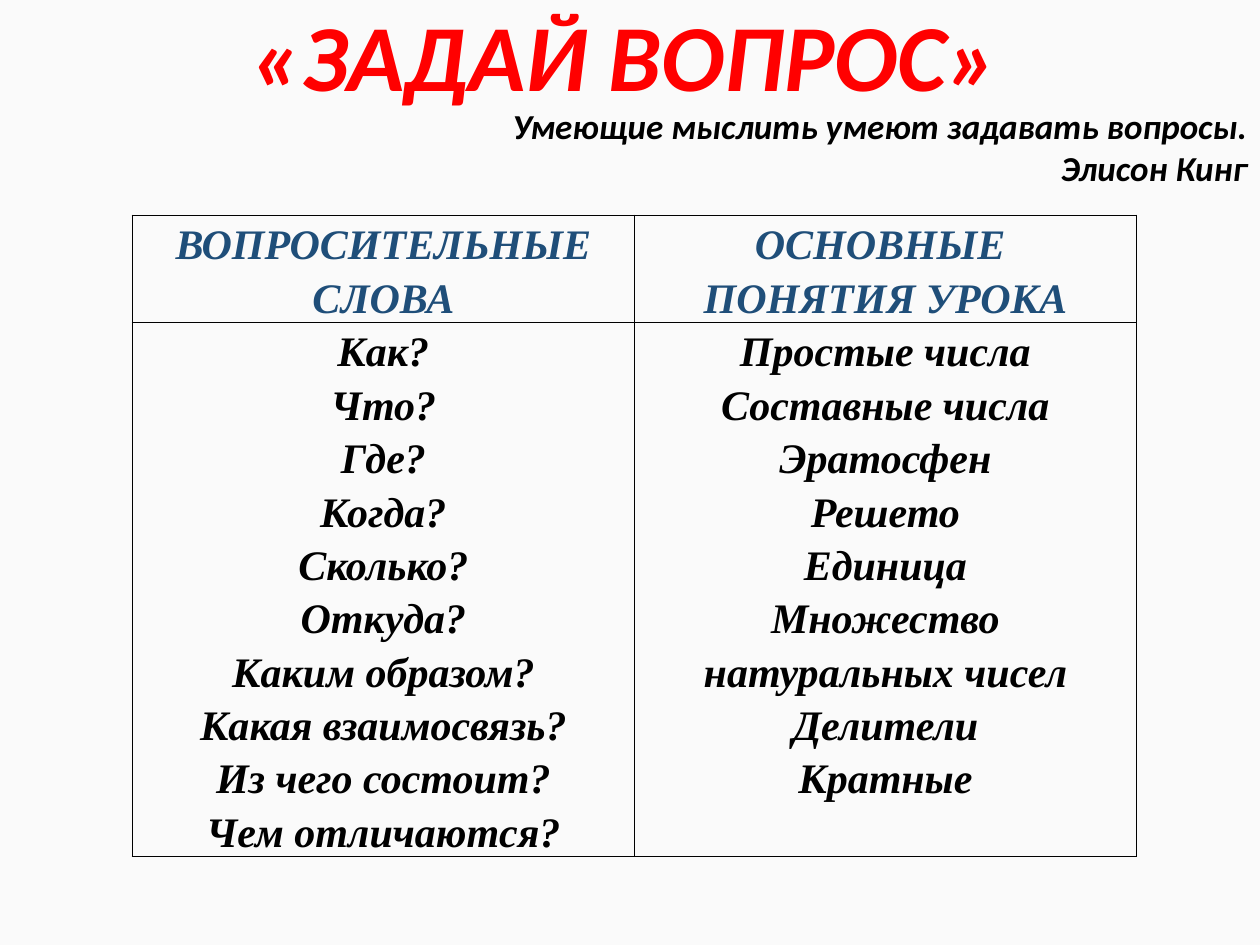
from pptx import Presentation
from pptx.dml.color import RGBColor as RGB
from pptx.enum.text import MSO_ANCHOR as ANCHOR, PP_ALIGN as ALIGN
from pptx.oxml import parse_xml
from pptx.oxml.ns import nsdecls
from pptx.util import Inches, Pt

TITLE = ["«ЗАДАЙ ВОПРОС»"]
QUOTE = ["Умеющие мыслить умеют задавать вопросы.", "Элисон Кинг"]
ROWS = [
    [["ВОПРОСИТЕЛЬНЫЕ СЛОВА"], ["ОСНОВНЫЕ ", "ПОНЯТИЯ УРОКА"]],
    [
        ["Как?", "Что?", "Где?", "Когда?", "Сколько?", "Откуда?", "Каким образом?",
         "Какая взаимосвязь?", "Из чего состоит?", "Чем отличаются?"],
        ["Простые числа", "Составные числа", "Эратосфен", "Решето", "Единица",
         "Множество натуральных чисел", "Делители", "Кратные"],
    ],
]
COLORS = {"back": "FAFAFA", "title": "FF0000", "head": "1F4E79", "text": "000000"}
WIDTH, HEIGHT = 10, 7.5
TITLE_BOX = (0.38, 0, 9.16, 0.96)
QUOTE_BOX = (3.61, 0.78, 6.39, 0.77)
TABLE_LEFT, TABLE_TOP, TABLE_WIDTH = 1.05, 1.71, 7.97
ROW_HEIGHTS = (0.85, 4.23)
CELL_FORMAT = {"margin_left": Inches(0.07), "margin_right": Inches(0.07),
               "margin_top": 0, "margin_bottom": 0, "vertical_anchor": ANCHOR.TOP}


def set_attrs(target, values):
    for name, value in values.items():
        setattr(target, name, value)


def write(tf, lines, font, size, color, align, spacing=1.0):
    tf.word_wrap = True
    for i, line in enumerate(lines):
        p = tf.add_paragraph() if i else tf.paragraphs[0]
        set_attrs(p, {"alignment": align, "line_spacing": spacing,
                      "space_before": Pt(0), "space_after": Pt(0)})
        r = p.add_run()
        r.text = line
        set_attrs(r.font, {"name": font, "size": Pt(size), "bold": True, "italic": True})
        r.font.color.rgb = RGB.from_string(COLORS[color])


def add_borders(cell):
    tc_pr = cell._tc.get_or_add_tcPr()
    for i, side in enumerate(("lnL", "lnR", "lnT", "lnB")):
        tc_pr.insert(i, parse_xml(
            f'<a:{side} {nsdecls("a")} w="{Pt(1)}"><a:solidFill>'
            f'<a:srgbClr val="{COLORS["text"]}"/></a:solidFill></a:{side}>'))


def add_question_table(s):
    frame = s.shapes.add_table(len(ROWS), len(ROWS[0]), Inches(TABLE_LEFT), Inches(TABLE_TOP),
                               Inches(TABLE_WIDTH), Inches(sum(ROW_HEIGHTS)))
    table = frame.table
    set_attrs(table, {"first_row": False, "horz_banding": False})
    for y, row in enumerate(ROWS):
        table.rows[y].height = Inches(ROW_HEIGHTS[y])
        for x, lines in enumerate(row):
            cell = table.cell(y, x)
            set_attrs(cell, CELL_FORMAT)
            cell.fill.background()
            add_borders(cell)
            write(cell.text_frame, lines, "Times New Roman", 24,
                  "text" if y else "head", ALIGN.CENTER, 1.15)


def main():
    prs = Presentation()
    set_attrs(prs, {"slide_width": Inches(WIDTH), "slide_height": Inches(HEIGHT)})
    s = prs.slides.add_slide(prs.slide_layouts[5])
    s.background.fill.solid()
    s.background.fill.fore_color.rgb = RGB.from_string(COLORS["back"])

    title = s.shapes.title
    set_attrs(title, dict(zip(("left", "top", "width", "height"), map(Inches, TITLE_BOX))))
    title.text_frame.vertical_anchor = ANCHOR.MIDDLE
    write(title.text_frame, TITLE, "Calibri", 54, "title", ALIGN.CENTER, 0.9)

    add_question_table(s)
    quote = s.shapes.add_textbox(*map(Inches, QUOTE_BOX))
    write(quote.text_frame, QUOTE, "Calibri", 20, "text", ALIGN.RIGHT)
    prs.save("out.pptx")


if __name__ == "__main__":
    main()
